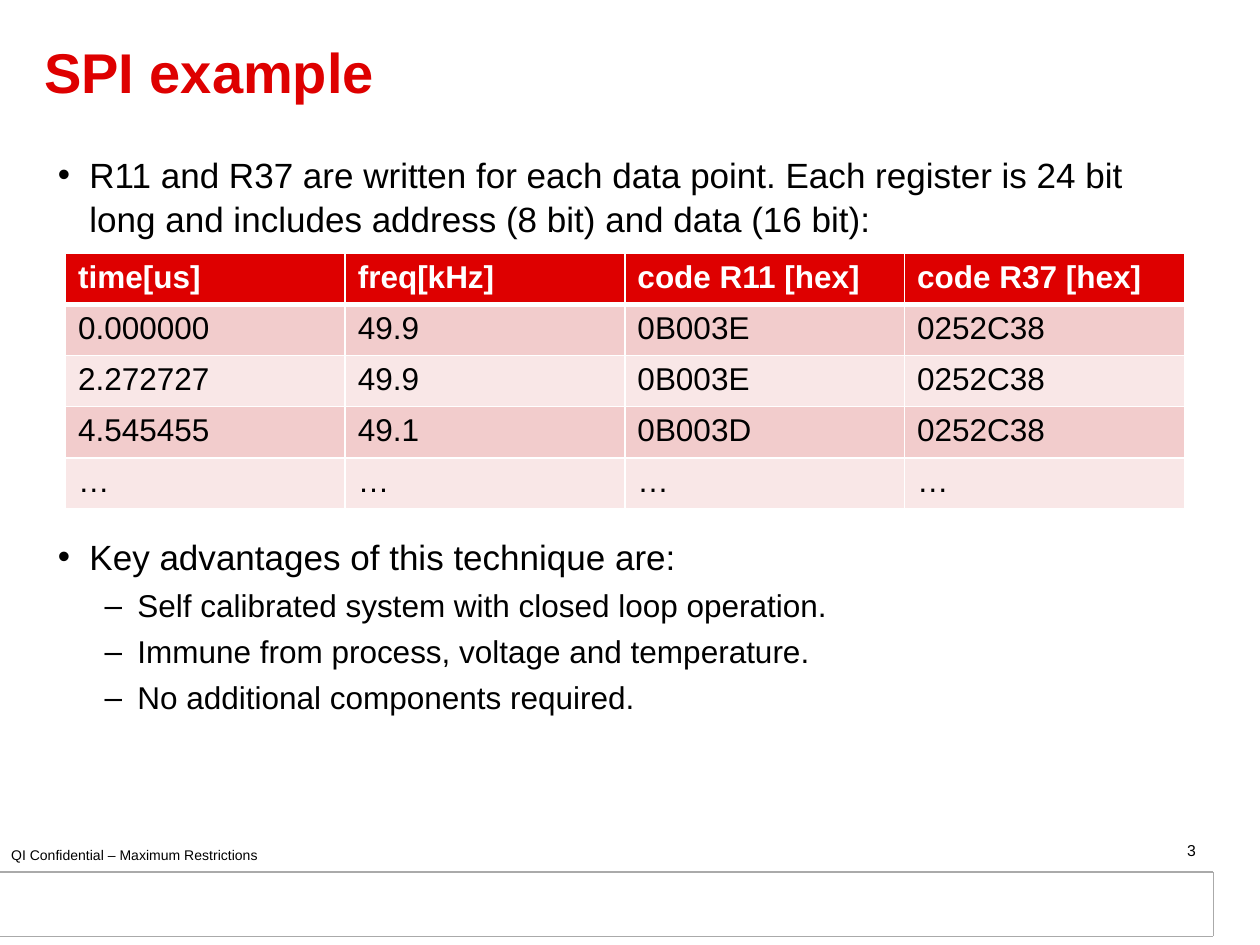
from lxml import etree
from pptx import Presentation
from pptx.dml.color import RGBColor
from pptx.enum.shapes import MSO_CONNECTOR
from pptx.enum.text import MSO_ANCHOR, MSO_AUTO_SIZE, PP_ALIGN
from pptx.oxml.ns import qn
from pptx.util import Inches, Pt

RED = RGBColor(0xDE, 0x00, 0x00)
ROSE = RGBColor(0xF2, 0xCC, 0xCC)
PALE = RGBColor(0xF9, 0xE7, 0xE7)
BLACK = RGBColor(0x00, 0x00, 0x00)
WHITE = RGBColor(0xFF, 0xFF, 0xFF)
GREY = RGBColor(0xAA, 0xAA, 0xAA)
LINE = MSO_CONNECTOR.STRAIGHT
TOP, MIDDLE = MSO_ANCHOR.TOP, MSO_ANCHOR.MIDDLE
LEFT, RIGHT = PP_ALIGN.LEFT, PP_ALIGN.RIGHT
FIXED = MSO_AUTO_SIZE.NONE

ROWS = [
    ("time[us]", "freq[kHz]", "code R11 [hex]", "code R37 [hex]"),
    ("0.000000", "49.9", "0B003E", "0252C38"),
    ("2.272727", "49.9", "0B003E", "0252C38"),
    ("4.545455", "49.1", "0B003D", "0252C38"),
    ("…", "…", "…", "…"),
]
POINTS = [
    (0, "R11 and R37 are written for each data point. Each register is "
        "24 bit long and includes address (8 bit) and data (16 bit):", 0),
    (0, "Key advantages of this technique are:", 168),
    (1, "Self calibrated system with closed loop operation.", 4),
    (1, "Immune from process, voltage and temperature.", 3.6),
    (1, "No additional components required.", 3.6),
]
LEVELS = [("•", 0.25, -0.25, 20), ("–", 0.63, -0.26, 18)]


def add_run(para, text, size, color=BLACK, bold=False):
    run = para.add_run()
    run.text = text
    font = run.font
    font.name, font.size, font.bold = "Arial", Pt(size), bold
    font.color.rgb = color


def place(shape, box):
    shape.left, shape.top, shape.width, shape.height = map(Inches, box)


def add_title(slide, box):
    title = slide.shapes.title
    place(title, box)
    frame = title.text_frame
    frame.auto_size, frame.vertical_anchor = FIXED, MIDDLE
    para = frame.paragraphs[0]
    para.alignment, para.line_spacing = LEFT, 0.85
    add_run(para, "SPI example", 32, RED, True)


def add_list(slide, box):
    body = slide.placeholders[1]
    place(body, box)
    frame = body.text_frame
    frame.auto_size, frame.vertical_anchor = FIXED, TOP
    for i, (level, text, gap) in enumerate(POINTS):
        para = frame.add_paragraph() if i else frame.paragraphs[0]
        mark, margin, indent, size = LEVELS[level]
        props = para._p.get_or_add_pPr()
        props.set("marL", str(Inches(margin)))
        props.set("indent", str(Inches(indent)))
        etree.SubElement(props, qn("a:buFont")).set("typeface", "Arial")
        etree.SubElement(props, qn("a:buChar")).set("char", mark)
        para.level, para.line_spacing = level, 1.05
        para.space_before = Pt(gap)
        add_run(para, text, size)


def add_edge(cell, side, width):
    props = cell._tc.get_or_add_tcPr()
    edge = etree.SubElement(props, qn("a:" + side), w=str(Pt(width)))
    fill = etree.SubElement(edge, qn("a:solidFill"))
    etree.SubElement(fill, qn("a:srgbClr")).set("val", str(WHITE))


def add_grid(slide, box):
    table = slide.shapes.add_table(
        len(ROWS), len(ROWS[0]), *map(Inches, box)).table
    table.horz_banding = False
    for r, row in enumerate(ROWS):
        head = r == 0
        for c, text in enumerate(row):
            cell = table.cell(r, c)
            for side in ("lnL", "lnR", "lnT", "lnB"):
                thick = (head and side == "lnB") or (r == 1 and side == "lnT")
                add_edge(cell, side, 3 if thick else 1)
            cell.fill.solid()
            cell.fill.fore_color.rgb = RED if head else (PALE, ROSE)[r % 2]
            add_run(cell.text_frame.paragraphs[0], text, 18,
                    WHITE if head else BLACK, head)


def add_note(slide, box, text, size, align):
    frame = slide.shapes.add_textbox(*map(Inches, box)).text_frame
    frame.word_wrap = True
    para = frame.paragraphs[0]
    para.alignment = align
    add_run(para, text, size)


def add_frame(slide, box):
    left, top, width, height = box
    right, base = left + width, top + height
    ends = [(left, base, right, base), (left, top, right, top),
            (right, base, right, top)]
    for pair in ends:
        line = slide.shapes.add_connector(LINE, *map(Inches, pair))
        line.line.color.rgb, line.line.width = GREY, Pt(0.75)
        etree.SubElement(line._element.spPr, qn("a:effectLst"))


def main():
    deck = Presentation()
    deck.slide_width, deck.slide_height = Inches(10), Inches(7.5)
    slide = deck.slides.add_slide(deck.slide_layouts[1])
    add_frame(slide, (-0.01, 6.92, 9.64, 0.51))
    add_note(slide, (-0.01, 6.67, 2.77, 0.24),
             "QI Confidential – Maximum Restrictions", 8, LEFT)
    add_title(slide, (0.25, 0.16, 9.25, 0.89))
    add_note(slide, (7.26, 6.62, 2.33, 0.23), "3", 9, RIGHT)
    add_grid(slide, (0.52, 2.01, 8.88, 2.03))
    add_list(slide, (0.36, 1.15, 9.26, 4.93))
    deck.save("out.pptx")


if __name__ == "__main__":
    main()
